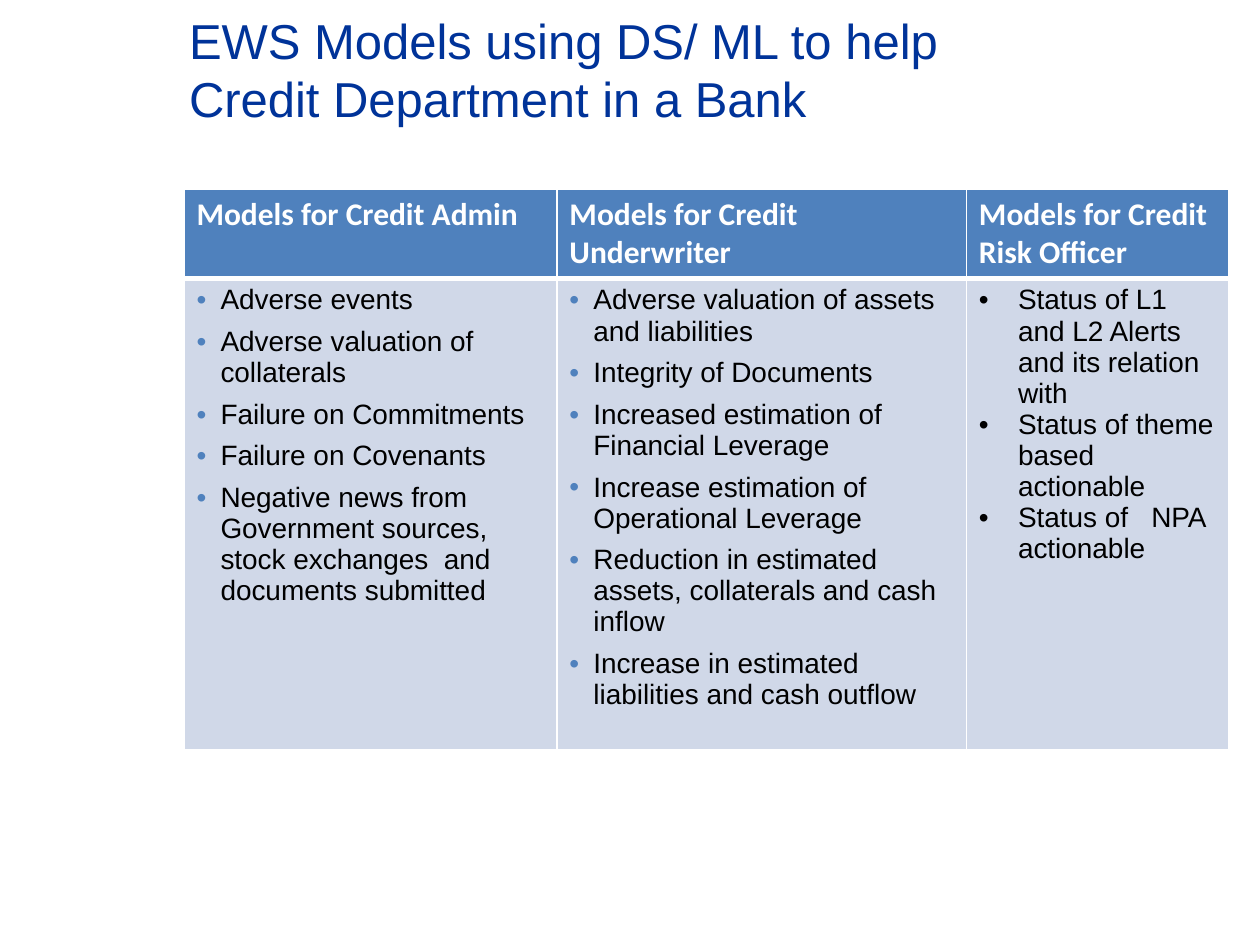
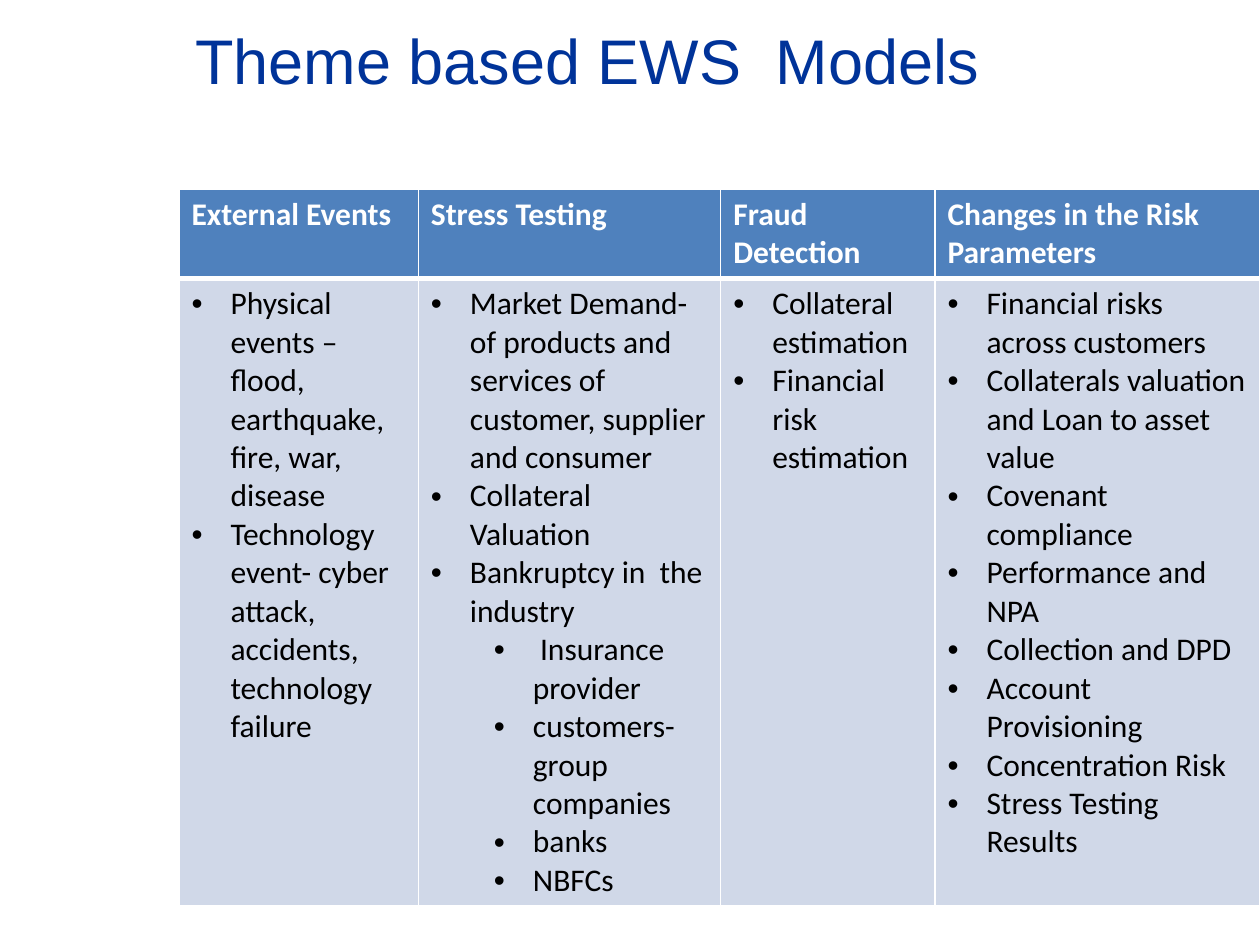
import pptx
import pptx.dml.color
import pptx.enum.text
import pptx.oxml.ns
import pptx.util
from lxml import etree

Inches = pptx.util.Inches
Pt = pptx.util.Pt
qn = pptx.oxml.ns.qn

TITLE_BLUE = "003399"
HEADER_BLUE = "4F81BD"
BODY_FILL = "D0D8E8"
WHITE = "FFFFFF"
BLACK = "000000"
HEADER_HEIGHT = 0.71
TABLE_TOP = 1.5

SPACED = {"indent": 0.19, "before": 6, "bullet_color": HEADER_BLUE}
PLAIN = {"indent": 0.31, "before": 0, "bullet_color": BLACK}
ARIAL = {"font": "Arial", "size": 16}
CALIBRI = {"font": "Calibri", "size": 18}

CREDIT_COLUMNS = [
    (2.96, "Models for Credit Admin", SPACED, [
        "Adverse events",
        "Adverse valuation of collaterals",
        "Failure on Commitments",
        "Failure on Covenants",
        "Negative news from Government sources, stock exchanges  and documents submitted",
    ]),
    (3.25, "Models for Credit Underwriter", SPACED, [
        "Adverse valuation of assets and liabilities",
        "Integrity of Documents",
        "Increased estimation of  Financial Leverage",
        "Increase estimation of  Operational Leverage",
        "Reduction in estimated assets, collaterals and cash inflow",
        "Increase in estimated liabilities and cash outflow",
    ]),
    (2.08, "Models for Credit Risk Officer", PLAIN, [
        "Status of L1 and L2 Alerts and its relation with",
        "Status of theme based actionable",
        "Status of   NPA actionable",
    ]),
]

THEME_COLUMNS = [
    (1.9, "External Events", PLAIN, [
        "Physical events – flood, earthquake, fire, war, disease",
        "Technology event- cyber attack, accidents, technology failure",
    ]),
    (2.4, "Stress Testing", PLAIN, [
        "Market Demand- of products and services of customer, supplier and consumer",
        "Collateral Valuation",
        "Bankruptcy in  the industry",
        [" Insurance provider", "customers- group companies", "banks", "NBFCs"],
    ]),
    (1.7, "Fraud Detection", PLAIN, [
        "Collateral estimation",
        "Financial risk estimation",
    ]),
    (2.58, "Changes in the Risk Parameters", PLAIN, [
        "Financial risks across customers",
        "Collaterals valuation and Loan to asset value",
        "Covenant compliance",
        "Performance and NPA",
        "Collection and DPD",
        "Account Provisioning",
        "Concentration Risk",
        "Stress Testing Results",
    ]),
]


def rgb(value):
    return pptx.dml.color.RGBColor.from_string(value)


def add_run(paragraph, text, font, size, color, bold=False):
    run = paragraph.add_run()
    run.text = text
    run.font.name = font
    run.font.size = Pt(size)
    run.font.bold = bold
    run.font.color.rgb = rgb(color)


def add_title(slide, box, text, size):
    shape = slide.shapes.add_textbox(*map(Inches, box))
    frame = shape.text_frame
    frame.word_wrap = True
    frame.margin_left = frame.margin_right = frame.margin_top = frame.margin_bottom = 0
    frame.vertical_anchor = pptx.enum.text.MSO_ANCHOR.TOP
    add_run(frame.paragraphs[0], text, "Arial", size, TITLE_BLUE)


def set_bullet(paragraph, color, indent, level):
    properties = paragraph._p.get_or_add_pPr()
    properties.set("marL", str(Inches(indent + 0.5 * level)))
    properties.set("indent", str(-Inches(indent)))
    bullet_color = etree.SubElement(properties, qn("a:buClr"))
    etree.SubElement(bullet_color, qn("a:srgbClr"), val=color)
    etree.SubElement(properties, qn("a:buFont"), typeface="Arial")
    etree.SubElement(properties, qn("a:buChar"), char="•")


def style_cell(cell, fill, top, bottom):
    properties = cell._tc.get_or_add_tcPr()
    for side, width in (("L", 1), ("R", 1), ("T", top), ("B", bottom)):
        line = etree.SubElement(properties, qn(f"a:ln{side}"), w=str(Pt(width)))
        solid = etree.SubElement(line, qn("a:solidFill"))
        etree.SubElement(solid, qn("a:srgbClr"), val=WHITE)
    cell.fill.solid()
    cell.fill.fore_color.rgb = rgb(fill)


def flatten(items, level=0):
    for item in items:
        if isinstance(item, list):
            yield from flatten(item, level + 1)
        else:
            yield level, item


def fill_body(cell, items, list_style, text_style):
    frame = cell.text_frame
    for index, (level, text) in enumerate(flatten(items)):
        paragraph = frame.add_paragraph() if index else frame.paragraphs[0]
        paragraph.level = level
        set_bullet(paragraph, list_style["bullet_color"], list_style["indent"], level)
        if index:
            paragraph.space_before = Pt(list_style["before"])
        add_run(paragraph, text, text_style["font"], text_style["size"], BLACK)


def add_model_table(slide, left, body_height, columns, text_style):
    total_width = sum(column[0] for column in columns)
    box = (left, TABLE_TOP, total_width, HEADER_HEIGHT + body_height)
    table = slide.shapes.add_table(2, len(columns), *map(Inches, box)).table
    table.horz_banding = False
    table.rows[0].height = Inches(HEADER_HEIGHT)
    table.rows[1].height = Inches(body_height)
    for index, (width, heading, list_style, items) in enumerate(columns):
        table.columns[index].width = Inches(width)
        header, body = table.cell(0, index), table.cell(1, index)
        style_cell(header, HEADER_BLUE, 1, 3)
        style_cell(body, BODY_FILL, 3, 1)
        add_run(header.text_frame.paragraphs[0], heading, "Calibri", 18, WHITE, True)
        fill_body(body, items, list_style, text_style)


def add_slide(presentation):
    slide = presentation.slides.add_slide(presentation.slide_layouts[6])
    slide.background.fill.solid()
    slide.background.fill.fore_color.rgb = rgb(WHITE)
    return slide


def build_credit_slide(presentation):
    slide = add_slide(presentation)
    add_title(slide, (1.5, 0.08, 6.85, 0.94),
              "EWS Models using DS/ ML to help Credit Department in a Bank", 28)
    add_model_table(slide, 1.46, 3.74, CREDIT_COLUMNS, ARIAL)


def build_theme_slide(presentation):
    slide = add_slide(presentation)
    add_title(slide, (1.42, 0.17, 7.42, 0.61), " Theme based EWS  Models", 36)
    add_model_table(slide, 1.42, 4.98, THEME_COLUMNS, CALIBRI)


def main():
    presentation = pptx.Presentation()
    presentation.slide_width = Inches(10)
    presentation.slide_height = Inches(7.5)
    build_credit_slide(presentation)
    build_theme_slide(presentation)
    presentation.save("out.pptx")


if __name__ == "__main__":
    main()
